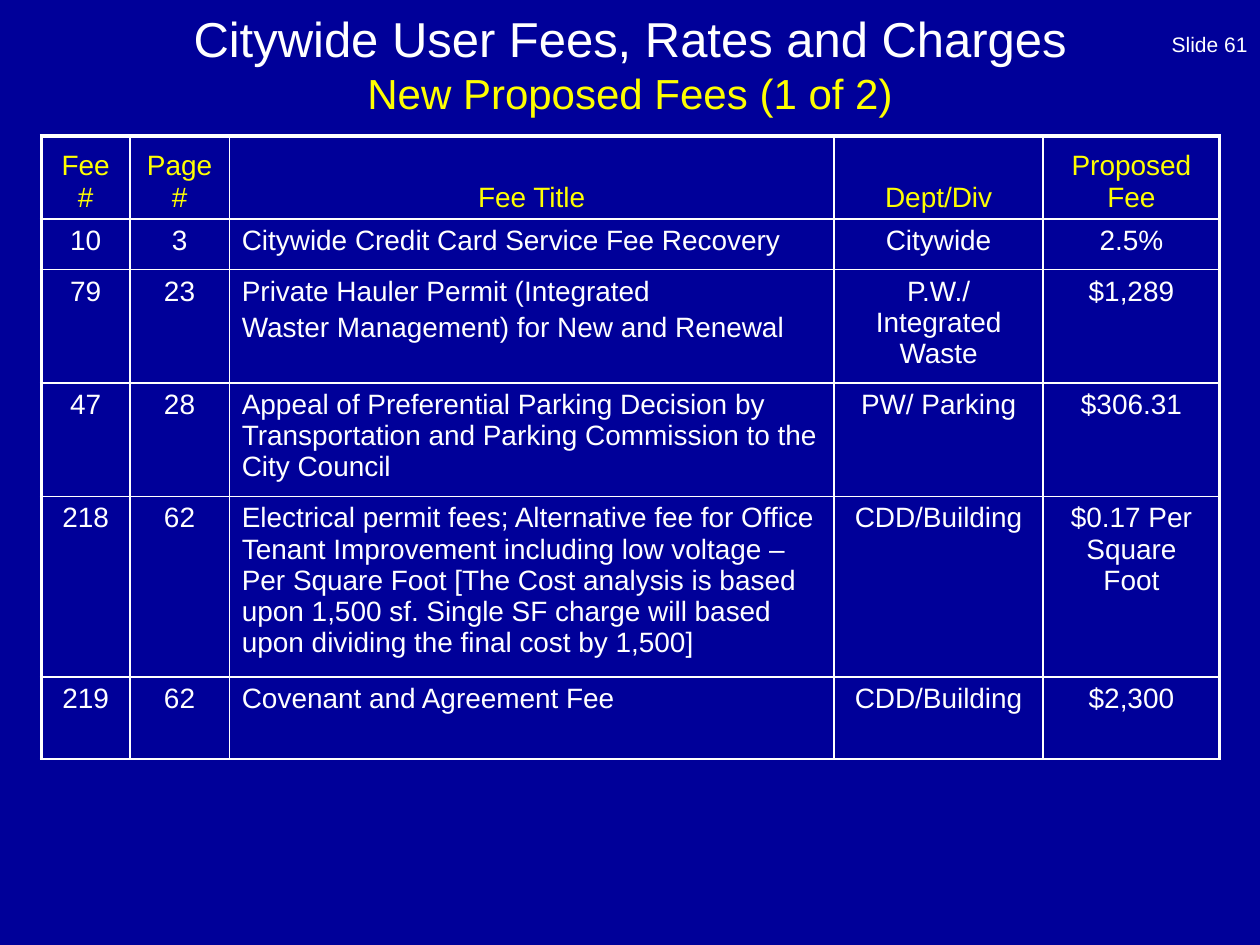
import pptx
import pptx.dml.color
import pptx.enum.text
import pptx.oxml.ns
import pptx.util
from lxml import etree

Inches = pptx.util.Inches
Pt = pptx.util.Pt
ALIGN = pptx.enum.text.PP_ALIGN
ANCHOR = pptx.enum.text.MSO_ANCHOR

NAVY, WHITE, YELLOW = "000099", "FFFFFF", "FFFF00"
THIN, THICK = 1, 2.25

COLUMN_WIDTHS = [0.7, 0.79, 4.8, 1.66, 1.4]
ROW_HEIGHTS = [0.66, 0.4, 0.84, 0.84, 1.33, 0.65]
TITLE_COLUMN = 2
FEES = [
    ["Fee#", "Page #", "Fee Title", "Dept/Div", "Proposed\nFee"],
    ["10", "3", "Citywide Credit Card Service Fee Recovery", "Citywide", "2.5%"],
    ["79", "23", "Private Hauler Permit (Integrated\n"
     "Waster Management) for New and Renewal", "P.W./ Integrated Waste", "$1,289"],
    ["47", "28", "Appeal of Preferential Parking Decision by Transportation and "
     "Parking Commission to the City Council", "PW/ Parking", "$306.31"],
    ["218", "62", "Electrical permit fees; Alternative fee for Office Tenant "
     "Improvement including low voltage – Per Square Foot [The Cost analysis is "
     "based upon 1,500 sf. Single SF charge will based upon dividing the final "
     "cost by 1,500]", "CDD/Building", "$0.17 Per Square Foot"],
    ["219", "62", "Covenant and Agreement Fee", "CDD/Building", "$2,300"],
]


def color(value):
    return pptx.dml.color.RGBColor.from_string(value)


def add_run(paragraph, text, size=16, fill=WHITE, font="Arial"):
    run = paragraph.add_run()
    run.text = text
    run.font.name = font
    run.font.size = Pt(size)
    run.font.color.rgb = color(fill)


def write_text(frame, text, align=ALIGN.CENTER, gap=0, **style):
    """Write one paragraph per line, with a gap in points between them."""
    for index, line in enumerate(text.split("\n")):
        paragraph = frame.add_paragraph() if index else frame.paragraphs[0]
        paragraph.alignment = align
        paragraph.space_before = Pt(gap if index else 0)
        add_run(paragraph, line, **style)


def set_borders(cell, widths):
    """Draw the cell sides; widths maps L, R, T, B (in that order) to points."""
    properties = cell._tc.get_or_add_tcPr()
    for side, width in widths.items():
        line = etree.SubElement(properties, pptx.oxml.ns.qn(f"a:ln{side}"), w=str(Pt(width)))
        solid = etree.SubElement(line, pptx.oxml.ns.qn("a:solidFill"))
        etree.SubElement(solid, pptx.oxml.ns.qn("a:srgbClr"), val=WHITE)


class FeeSlide:
    def __init__(self, presentation):
        self.slide = presentation.slides.add_slide(presentation.slide_layouts[5])
        self.slide.background.fill.solid()
        self.slide.background.fill.fore_color.rgb = color(NAVY)

    def add_title(self, title, subtitle):
        shape = self.slide.shapes.title
        shape.left, shape.top = Inches(0.5), Inches(0)
        shape.width, shape.height = Inches(9), Inches(1)
        frame = shape.text_frame
        frame.word_wrap = True
        frame.vertical_anchor = ANCHOR.MIDDLE
        paragraph = frame.paragraphs[0]
        paragraph.alignment = ALIGN.CENTER
        add_run(paragraph, title, size=28)
        paragraph.add_line_break()
        add_run(paragraph, subtitle, size=24, fill=YELLOW)

    def add_page_label(self, text):
        box = self.slide.shapes.add_textbox(Inches(7.67), Inches(0), Inches(2.33), Inches(0.5))
        box.text_frame.word_wrap = True
        box.text_frame.vertical_anchor = ANCHOR.BOTTOM
        write_text(box.text_frame, text, align=ALIGN.RIGHT, size=12)

    def add_table(self, rows):
        last_column = len(COLUMN_WIDTHS) - 1
        table = self.slide.shapes.add_table(
            len(rows), len(COLUMN_WIDTHS), Inches(0.33), Inches(1.08),
            Inches(sum(COLUMN_WIDTHS)), Inches(sum(ROW_HEIGHTS))).table
        table.first_row = table.horz_banding = False
        for column, width in zip(table.columns, COLUMN_WIDTHS):
            column.width = Inches(width)
        for row, height in zip(table.rows, ROW_HEIGHTS):
            row.height = Inches(height)

        for r, values in enumerate(rows):
            header = r == 0
            for c, text in enumerate(values):
                cell = table.cell(r, c)
                set_borders(cell, {
                    "L": THICK if c == 0 else THIN,
                    "R": THICK if c == last_column else THIN,
                    "T": THICK if header else THIN,
                    "B": THIN,
                })
                cell.fill.background()
                cell.vertical_anchor = ANCHOR.BOTTOM if header else ANCHOR.TOP
                left = c == TITLE_COLUMN and not header
                write_text(cell.text_frame, text,
                           align=ALIGN.LEFT if left else ALIGN.CENTER,
                           gap=0 if header else 3.2,
                           fill=YELLOW if header else WHITE)


def main():
    presentation = pptx.Presentation()
    presentation.slide_width, presentation.slide_height = Inches(10), Inches(7.5)

    # Heading and page label
    page = FeeSlide(presentation)
    page.add_page_label("Slide 61")
    page.add_title("Citywide User Fees, Rates and Charges", "New Proposed Fees (1 of 2)")

    # Fee table
    page.add_table(FEES)
    presentation.save("out.pptx")


if __name__ == "__main__":
    main()
